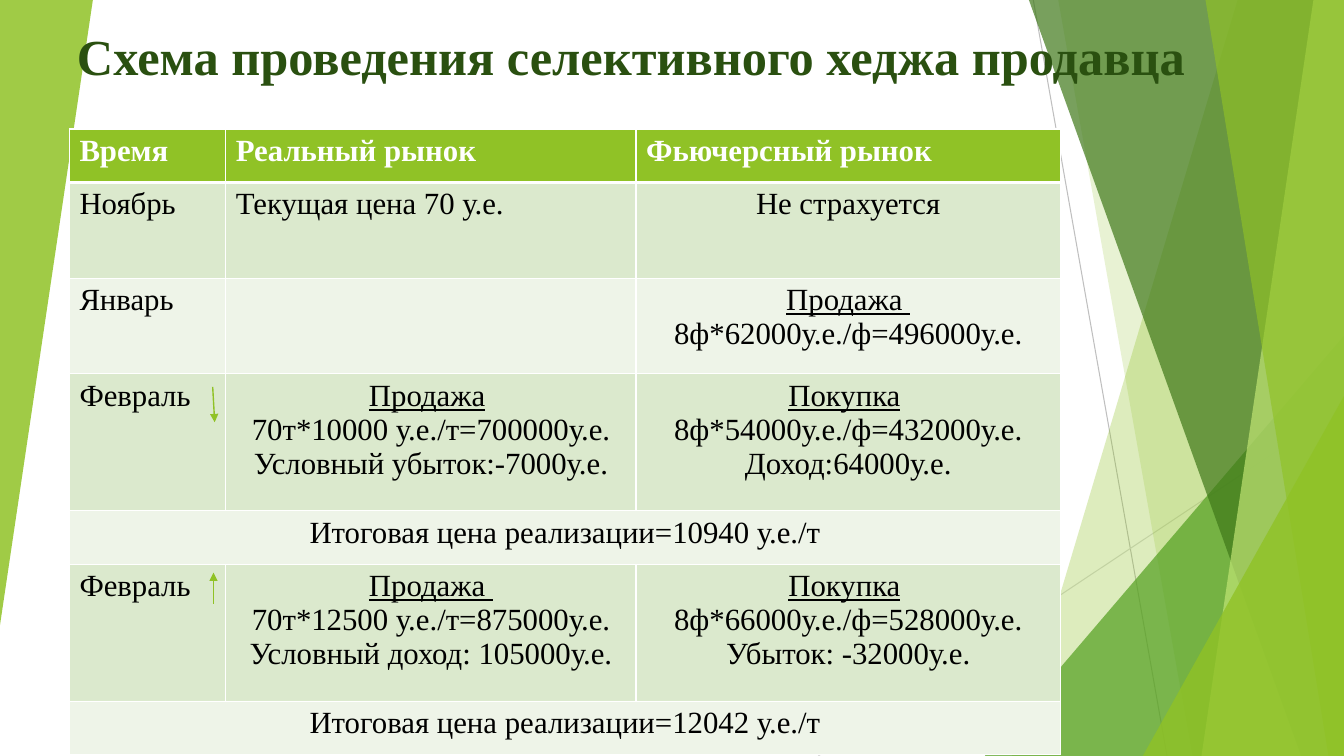
"""Build the slide with the scheme of a seller's selective hedge."""
from lxml.etree import SubElement
from pptx import Presentation
from pptx.dml.color import RGBColor
from pptx.enum.shapes import MSO_CONNECTOR as Link, MSO_SHAPE as Preset
from pptx.enum.text import MSO_ANCHOR as Anchor, PP_ALIGN as Align
from pptx.oxml import parse_xml
from pptx.oxml.ns import nsdecls, qn
from pptx.util import Cm, Pt

WIDTH, HEIGHT = 33.87, 19.05
FONT = "Times New Roman"
LIME = "90C226"


def paint(facet, color, opacity):
    facet.shadow.inherit = False
    facet.line.fill.background()
    facet.fill.solid()
    facet.fill.fore_color.rgb = RGBColor.from_string(color)
    tint = facet.element.spPr.find(qn("a:solidFill")).find(qn("a:srgbClr"))
    SubElement(tint, qn("a:alpha"), val=str(opacity * 1000))


def draw_line(start, end, color, weight):
    line = slide.shapes.add_connector(Link.STRAIGHT, *map(Cm, start + end))
    line.line.color.rgb = RGBColor.from_string(color)
    line.line.width = Pt(weight)
    SubElement(line.element.spPr, qn("a:effectLst"))
    return line


deck = Presentation()
deck.slide_width, deck.slide_height = Cm(WIDTH), Cm(HEIGHT)
slide = deck.slides.add_slide(deck.slide_layouts[5])

draw_line((26.04, 0), (29.41, HEIGHT), "BFBFBF", 0.75)
draw_line((WIDTH, 10.24), (20.62, HEIGHT), "D9D9D9", 0.75)

facets = [
    (31.19, 25.5, 0, LIME, 30),
    (26.67, 30.05, 0, LIME, 20),
    (WIDTH, 24.82, 8.46, "54A021", 72),
    (25.93, 32.79, 0, "3F7819", 70),
    (33.1, 30.28, 0, "C0E474", 70),
    (30.38, 33.48, 0, LIME, 65),
    (WIDTH, 28.8, 9.98, LIME, 80),
]
for top_x, bottom_x, top_y, color, opacity in facets:
    if top_x == WIDTH:
        facet = slide.shapes.add_shape(
            Preset.ISOSCELES_TRIANGLE, Cm(bottom_x), Cm(top_y),
            Cm(WIDTH - bottom_x), Cm(HEIGHT - top_y))
        facet.adjustments[0] = 1
    else:
        outline = slide.shapes.build_freeform(Cm(top_x), Cm(top_y))
        corners = [(WIDTH, top_y), (WIDTH, HEIGHT), (bottom_x, HEIGHT)]
        outline.add_line_segments([(Cm(x), Cm(y)) for x, y in corners])
        facet = outline.convert_to_shape()
    paint(facet, color, opacity)

left_facet = slide.shapes.add_shape(
    Preset.ISOSCELES_TRIANGLE, 0, 0, Cm(2.34), Cm(15.75))
left_facet.adjustments[0] = 1
left_facet.rotation = 180
paint(left_facet, LIME, 85)

title = slide.shapes.title
title.left, title.top, title.width, title.height = map(Cm, (1.07, 0.25, 29.67, 2.03))
title.text_frame.text = "Схема проведения селективного хеджа продавца"
title.text_frame.vertical_anchor = Anchor.BOTTOM
heading = title.text_frame.paragraphs[0]
heading.alignment = Align.CENTER
heading.font.name, heading.font.size, heading.font.bold = FONT, Pt(36), True
heading.font.color.rgb = RGBColor.from_string("2A5010")
slide.shapes.element.append(title.element)

# "|" ends the underlined part of a deal's first line
deals = [
    ["Время", "Реальный рынок", "Фьючерсный рынок"],
    ["Ноябрь", "Текущая цена 70 у.е.", "Не страхуется"],
    ["Январь", "", "Продажа \n8ф*62000у.е./ф=496000у.е."],
    ["Февраль",
     "Продажа| \n70т*10000 у.е./т=700000у.е.\nУсловный убыток:-7000у.е.",
     "Покупка| \n8ф*54000у.е./ф=432000у.е.\nДоход:64000у.е."],
    ["Итоговая цена реализации=10940 у.е./т"],
    ["Февраль",
     "Продажа \n70т*12500 у.е./т=875000у.е.\nУсловный доход: 105000у.е.",
     "Покупка| \n8ф*66000у.е./ф=528000у.е.\nУбыток: -32000у.е."],
    ["Итоговая цена реализации=12042 у.е./т"],
]
column_widths = [3.94, 10.34, 10.69]
row_heights = [1.35, 2.41, 2.41, 3.45, 1.35, 3.45, 1.35]
scheme = slide.shapes.add_table(
    len(deals), len(column_widths), Cm(1.75), Cm(3.25),
    Cm(sum(column_widths)), Cm(sum(row_heights))).table
for column, width in zip(scheme.columns, column_widths):
    column.width = Cm(width)

for r, deal in enumerate(deals):
    scheme.rows[r].height = Cm(row_heights[r])
    is_total = len(deal) == 1
    if is_total:
        scheme.cell(r, 0).merge(scheme.cell(r, 2))
    for c, cell in enumerate(scheme.rows[r].cells):
        cell.fill.solid()
        band = LIME if r == 0 else ("EEF4E8", "DBE9CD")[r % 2]
        cell.fill.fore_color.rgb = RGBColor.from_string(band)
        for place, side in enumerate("LRTB"):
            weight = 3 if (r, side) in ((0, "B"), (1, "T")) else 1
            cell._tc.tcPr.insert(place, parse_xml(
                f'<a:ln{side} {nsdecls("a")} w="{int(Pt(weight))}"><a:solidFill>'
                f'<a:srgbClr val="FFFFFF"/></a:solidFill></a:ln{side}>'))
        if c >= len(deal):
            continue
        lines = deal[c].split("\n")
        centred = is_total or len(lines) > 1 or (r > 0 and c == 2)
        cell.text_frame.text = "\n".join(line.split("|")[0] for line in lines)
        for line, paragraph in zip(lines, cell.text_frame.paragraphs):
            paragraph.alignment = Align.CENTER if centred else Align.LEFT
            if len(lines) > 1 and line == lines[0]:
                paragraph.runs[0].font.underline = True
            if "|" in line:
                paragraph.add_run().text = line.split("|")[1]
            for run in paragraph.runs:
                run.font.name, run.font.size, run.font.bold = FONT, Pt(22), r == 0
                run.font.color.rgb = RGBColor.from_string(
                    "FFFFFF" if r == 0 else "000000")

price_moves = [((5.36, 9.75), (5.41, 10.64)), ((5.38, 15.21), (5.38, 14.43))]
for start, end in price_moves:
    arrow = draw_line(start, end, LIME, 1)
    SubElement(arrow.element.spPr.find(qn("a:ln")), qn("a:tailEnd"), type="triangle")

deck.save("out.pptx")
